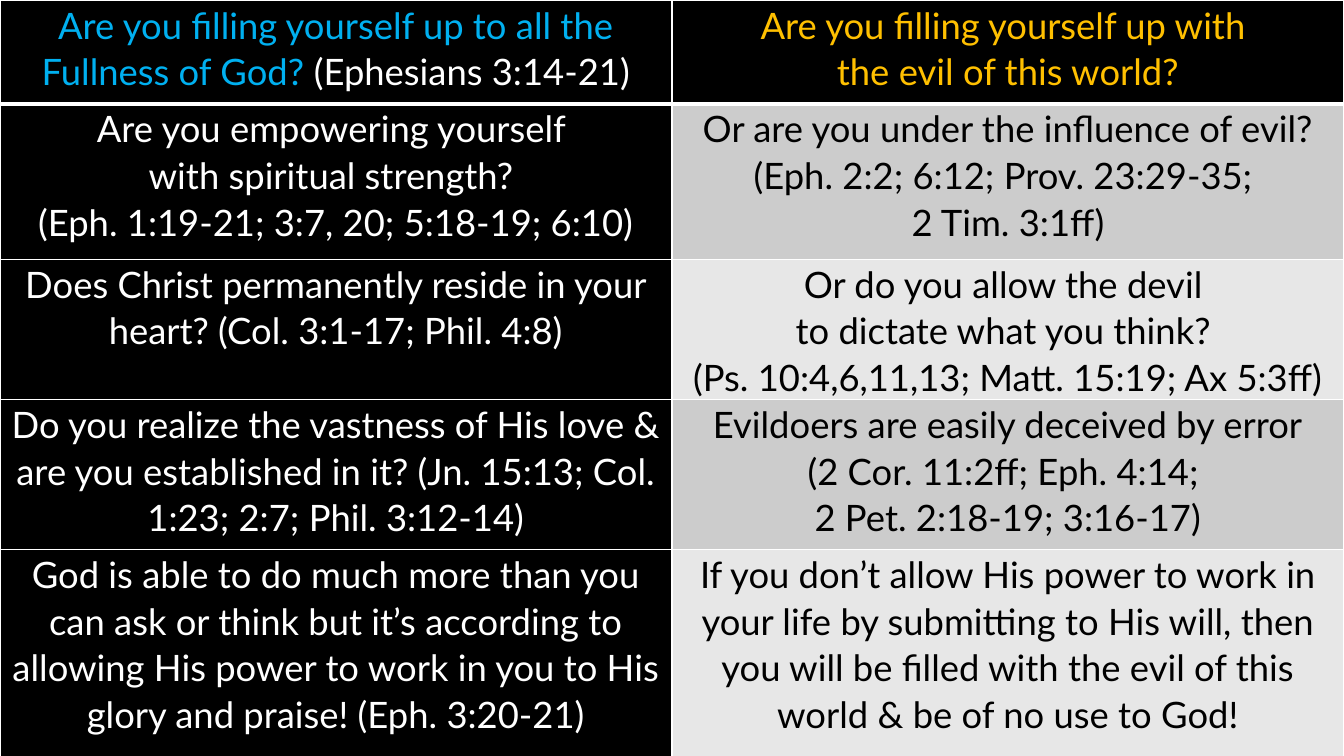
from dataclasses import dataclass

from lxml import etree
from pptx import Presentation
from pptx.dml.color import RGBColor
from pptx.enum import text
from pptx.oxml import ns
from pptx.table import _Cell
from pptx.util import Cm, Pt

COLORS = {
    "black": "000000",
    "white": "FFFFFF",
    "blue": "00B0F0",
    "gold": "FFC000",
    "gray": "CCCCCC",
    "light": "E7E7E7",
}
FONT = "Lato"
WIDTH, HEIGHT = 33.87, 19.05
ROW_HEIGHTS = [2.62, 3.91, 3.53, 3.78, 5.21]


@dataclass(frozen=True)
class Span:
    text: str
    color: str


@dataclass(frozen=True)
class Entry:
    fill: str
    lines: list[list[Span]]


def plain(fill: str, color: str, *lines: str) -> Entry:
    return Entry(fill, [[Span(line, color)] for line in lines])


def good(*lines: str) -> Entry:
    return plain("black", "white", *lines)


ROWS = [
    (
        Entry("black", [[
            Span("Are you filling yourself up to all the Fullness of God? ", "blue"),
            Span("(Ephesians 3:14-21)", "white"),
        ]]),
        plain("black", "gold", "Are you filling yourself up with ", "the evil of this world?"),
    ),
    (
        good(
            "Are you empowering yourself ",
            "with spiritual strength? ",
            "(Eph. 1:19-21; 3:7, 20; 5:18-19; 6:10)",
        ),
        plain(
            "gray", "black",
            "Or are you under the influence of evil? (Eph. 2:2; 6:12; Prov. 23:29-35; ",
            "2 Tim. 3:1ff)",
        ),
    ),
    (
        good("Does Christ permanently reside in your heart? (Col. 3:1-17; Phil. 4:8)"),
        plain(
            "light", "black",
            "Or do you allow the devil ",
            "to dictate what you think? ",
            "(Ps. 10:4,6,11,13; Matt. 15:19; Ax 5:3ff)",
        ),
    ),
    (
        good(
            "Do you realize the vastness of His love & are you established in it? "
            "(Jn. 15:13; Col. 1:23; 2:7; Phil. 3:12-14)"
        ),
        plain(
            "gray", "black",
            "Evildoers are easily deceived by error",
            "(2 Cor. 11:2ff; Eph. 4:14; ",
            "2 Pet. 2:18-19; 3:16-17)",
        ),
    ),
    (
        good(
            "God is able to do much more than you can ask or think but it’s according to "
            "allowing His power to work in you to His glory and praise! (Eph. 3:20-21)"
        ),
        plain(
            "light", "black",
            "If you don’t allow His power to work in your life by submitting to His will, "
            "then you will be filled with the evil of this world & be of no use to God!",
        ),
    ),
]


def rgb(name: str) -> RGBColor:
    return RGBColor.from_string(COLORS[name])


def set_borders(cell: _Cell, top: float, bottom: float) -> None:
    tc_pr = cell._tc.get_or_add_tcPr()
    for side, width in (("L", 1), ("R", 1), ("T", top), ("B", bottom)):
        ln = etree.SubElement(tc_pr, ns.qn(f"a:ln{side}"), w=str(Pt(width)))
        fill = etree.SubElement(ln, ns.qn("a:solidFill"))
        etree.SubElement(fill, ns.qn("a:srgbClr"), val=COLORS["white"])


def fill_cell(cell: _Cell, entry: Entry) -> None:
    cell.fill.solid()
    cell.fill.fore_color.rgb = rgb(entry.fill)
    cell.margin_left = cell.margin_right = Cm(0.18)
    cell.margin_top = cell.margin_bottom = 0
    tf = cell.text_frame
    tf.text = "\n".join("" for _ in entry.lines)
    for p, spans in zip(tf.paragraphs, entry.lines):
        p.alignment = text.PP_ALIGN.CENTER
        p.line_spacing = 1.07
        for span in spans:
            r = p.add_run()
            r.text = span.text
            r.font.name = FONT
            r.font.size = Pt(26)
            r.font.bold = False
            r.font.color.rgb = rgb(span.color)


def main() -> None:
    prs = Presentation()
    prs.slide_width, prs.slide_height = Cm(WIDTH), Cm(HEIGHT)
    s = prs.slides.add_slide(prs.slide_layouts.get_by_name("Blank"))
    s.background.fill.solid()
    s.background.fill.fore_color.rgb = rgb("black")

    table = s.shapes.add_table(len(ROWS), 2, 0, 0, Cm(WIDTH), Cm(HEIGHT)).table
    for i, (height, entries) in enumerate(zip(ROW_HEIGHTS, ROWS)):
        table.rows[i].height = Cm(height)
        for j, entry in enumerate(entries):
            cell = table.cell(i, j)
            set_borders(cell, top=3 if i == 1 else 1, bottom=3 if i == 0 else 1)
            fill_cell(cell, entry)

    prs.save("out.pptx")


if __name__ == "__main__":
    main()
